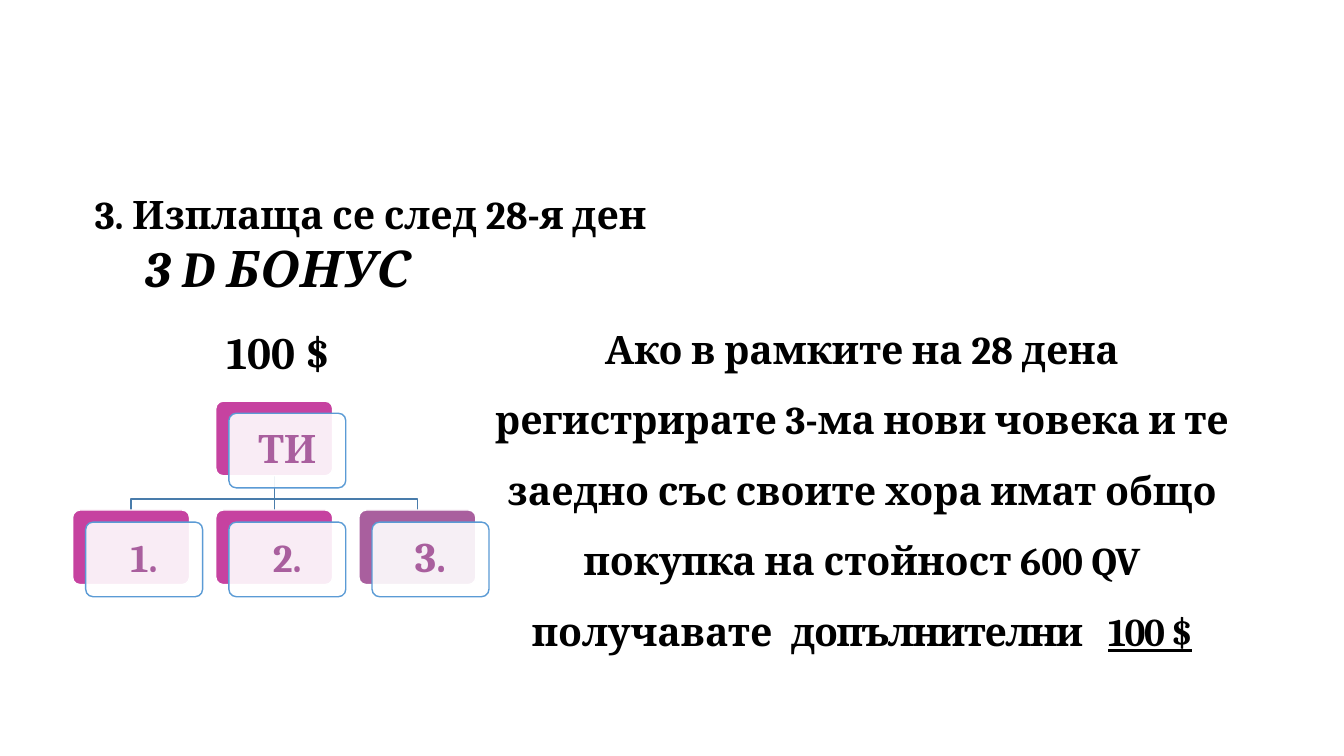
from lxml import etree
from pptx import Presentation
from pptx.dml.color import RGBColor
from pptx.enum.shapes import MSO_CONNECTOR as Connector, MSO_SHAPE as Preset
from pptx.enum.text import MSO_ANCHOR as Anchor, MSO_AUTO_SIZE as AutoSize, PP_ALIGN as Align
from pptx.oxml.ns import qn
from pptx.util import Inches, Pt

FONT = "Cambria"
BLACK, WHITE = "000000", "FFFFFF"
MAGENTA, PURPLE = "C642A0", "A95F9E"
CARD_EDGE, BRANCH_COLOR = "5B9BD5", "497CAB"
CHART_LEFT, CHART_TOP = 0.72, 3.98
COLUMN_STEP, ROW_STEP = 1.42, 1.08
CARD_WIDTH, CARD_HEIGHT = 1.16, 0.74
FRONT_SHIFT_X, FRONT_SHIFT_Y = 0.13, 0.12
BUS_DROP = 0.23


def color(hex_string):
    return RGBColor.from_string(hex_string)


def add_run(paragraph, text, size, hex_color=BLACK, italic=False, underline=False, tracking=0):
    run = paragraph.add_run()
    run.text = text
    font = run.font
    font.name, font.size, font.bold = FONT, Pt(size), True
    font.italic, font.underline = italic, underline
    font.color.rgb = color(hex_color)
    if tracking:
        run._r.get_or_add_rPr().set("spc", str(tracking * 100))


def add_text_box(slide, left, top, width, height):
    frame = slide.shapes.add_textbox(*map(Inches, (left, top, width, height))).text_frame
    frame.word_wrap = True
    return frame.paragraphs[0]


def add_heading(slide):
    title = slide.shapes.title
    title.left, title.top, title.width, title.height = map(Inches, (0.84, 1.84, 9.56, 1.18))
    frame = title.text_frame
    frame.auto_size = AutoSize.NONE
    frame.vertical_anchor = Anchor.TOP
    first, second = frame.paragraphs[0], frame.add_paragraph()
    for paragraph in (first, second):
        paragraph.alignment = Align.LEFT
    properties = first._p.get_or_add_pPr()
    properties.set("marL", str(Inches(0.5)))
    properties.set("indent", str(Inches(-0.5)))
    add_run(first, "3. Изплаща се след 28-я ден", 28)
    add_run(second, "3 D БОНУС", 36, italic=True)


def add_panel(slide, left, top, fill, edge):
    panel = slide.shapes.add_shape(
        Preset.ROUNDED_RECTANGLE, *map(Inches, (left, top, CARD_WIDTH, CARD_HEIGHT)))
    panel.adjustments[0] = 0.1
    panel.shadow.inherit = False
    panel.fill.solid()
    panel.fill.fore_color.rgb = color(fill)
    panel.line.color.rgb = color(edge)
    panel.line.width = Pt(1)
    return panel


def add_card(slide, column, row, label, size, fill):
    left = CHART_LEFT + column * COLUMN_STEP
    top = CHART_TOP + row * ROW_STEP
    add_panel(slide, left, top, fill, WHITE)
    front = add_panel(slide, left + FRONT_SHIFT_X, top + FRONT_SHIFT_Y, WHITE, CARD_EDGE)
    front_color = front.fill._xPr.find(qn("a:solidFill"))[0]
    etree.SubElement(front_color, qn("a:alpha")).set("val", "90000")
    frame = front.text_frame
    frame.vertical_anchor = Anchor.MIDDLE
    frame.margin_left = frame.margin_right = Inches(0.14)
    frame.margin_top = frame.margin_bottom = Inches(0.14)
    paragraph = frame.paragraphs[0]
    paragraph.alignment = Align.CENTER
    paragraph.line_spacing = 0.9
    add_run(paragraph, label, size, PURPLE)


def style_branch(branch):
    branch.line.color.rgb = color(BRANCH_COLOR)
    branch.line.width = Pt(1)


def add_branch(slide, column):
    start_x = CHART_LEFT + COLUMN_STEP + CARD_WIDTH / 2
    start_y = CHART_TOP + CARD_HEIGHT
    end_x = start_x + (column - 1) * COLUMN_STEP
    end_y = CHART_TOP + ROW_STEP
    if column == 1:
        branch = slide.shapes.add_connector(
            Connector.STRAIGHT, *map(Inches, (start_x, start_y, end_x, end_y)))
        etree.SubElement(branch._element.spPr, qn("a:effectLst"))
        style_branch(branch)
        return
    bus_y = start_y + BUS_DROP
    builder = slide.shapes.build_freeform(Inches(start_x), Inches(start_y))
    corners = [(start_x, bus_y), (end_x, bus_y), (end_x, end_y)]
    builder.add_line_segments([(Inches(x), Inches(y)) for x, y in corners], close=False)
    branch = builder.convert_to_shape()
    branch.fill.background()
    branch.shadow.inherit = False
    style_branch(branch)


def add_team_chart(slide):
    for column in (2, 1, 0):
        add_branch(slide, column)
    add_card(slide, 1, 0, "ТИ", 28, MAGENTA)
    members = [("1.", 28, MAGENTA), ("2.", 28, MAGENTA), ("3.", 30, PURPLE)]
    for column, member in enumerate(members):
        add_card(slide, column, 1, *member)


def add_conditions(slide):
    paragraph = add_text_box(slide, 4.7, 2.94, 7.7, 3.64)
    paragraph.alignment = Align.CENTER
    paragraph.line_spacing = 1.5
    add_run(paragraph, "Ако в рамките на 28 дена регистрирате 3-ма нови човека и те заедно "
            "със своите хора имат общо покупка на стойност 600 QV получавате", 28)
    add_run(paragraph, " ", 28, tracking=7)
    add_run(paragraph, "допълнителни", 28, tracking=-1)
    add_run(paragraph, " ", 28, tracking=12)
    add_run(paragraph, "100 $", 28, underline=True, tracking=-1)


def main():
    presentation = Presentation()
    presentation.slide_width, presentation.slide_height = Inches(13.33), Inches(7.5)
    slide = presentation.slides.add_slide(presentation.slide_layouts[5])
    add_heading(slide)
    add_team_chart(slide)
    add_conditions(slide)
    add_run(add_text_box(slide, 2.15, 3.17, 1.35, 0.64), "100 $", 32)
    presentation.save("out.pptx")


if __name__ == "__main__":
    main()
